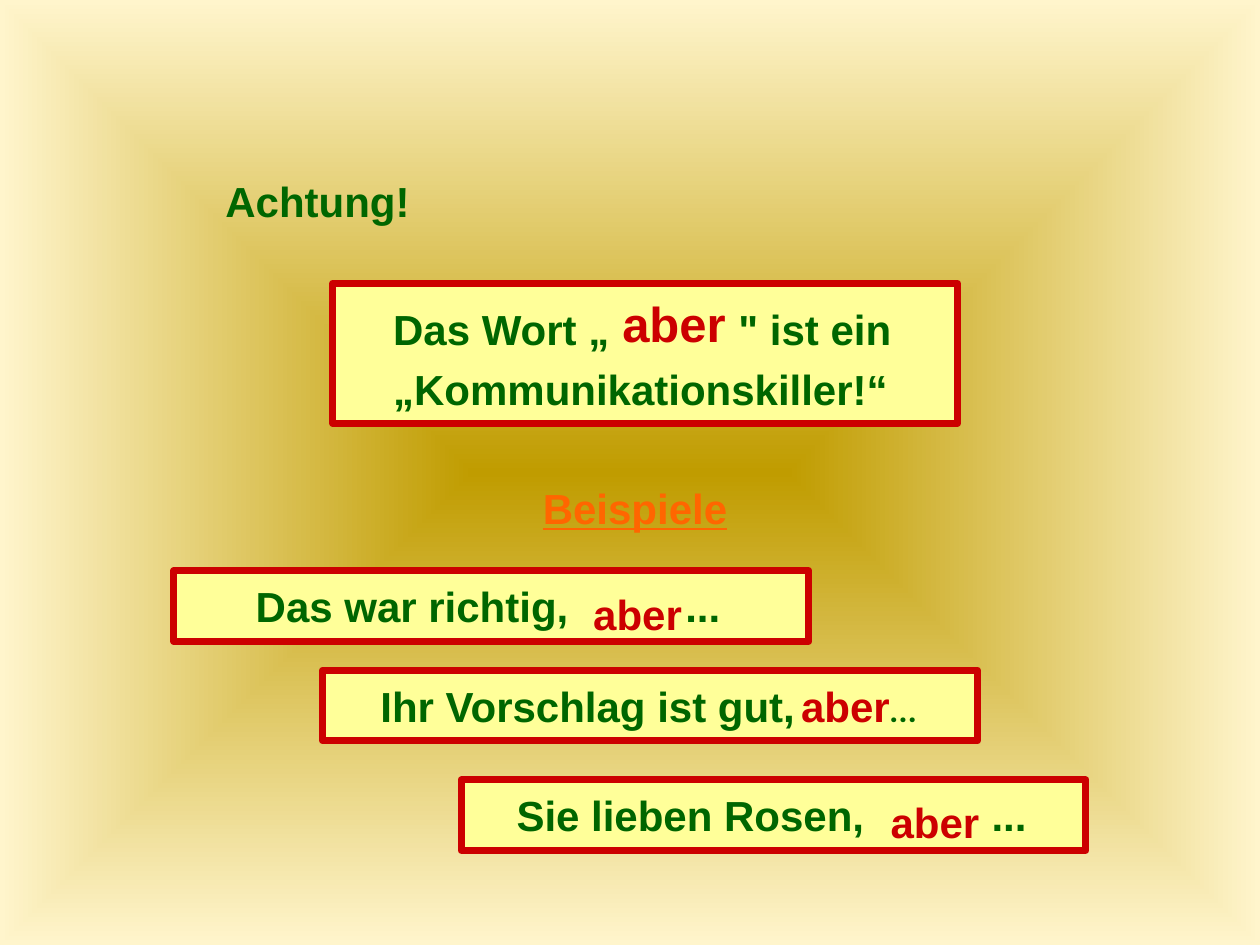
from lxml import etree
from pptx import Presentation
from pptx import util as u
from pptx.dml.color import RGBColor
from pptx.enum import shapes, text
from pptx.oxml.ns import qn

GREEN = RGBColor(0x00, 0x66, 0x00)
RED = RGBColor(0xCC, 0x00, 0x00)
ORANGE = RGBColor(0xFF, 0x66, 0x00)
CREAM = RGBColor(0xFF, 0xFF, 0x99)
GOLD = RGBColor(0xC0, 0x9C, 0x00)
PALE = RGBColor(0xFF, 0xF5, 0xCC)


class Deck:
    font = "Arial"
    size = 24

    def __init__(self):
        self.prs = Presentation()
        self.prs.slide_width = u.Inches(10)
        self.prs.slide_height = u.Inches(7.5)
        self.slide = self.prs.slides.add_slide(self.prs.slide_layouts[6])

    def back(self, inner, outer):
        """Fill the background with a gradient from the centre outwards."""
        fill = self.slide.background.fill
        fill.gradient()
        for stop, color in zip(fill.gradient_stops, (inner, outer)):
            stop.color.rgb = color
        grad = self.slide.element.find(".//" + qn("a:gradFill"))
        grad.remove(grad.find(qn("a:lin")))
        way = etree.SubElement(grad, qn("a:path"), {"path": "shape"})
        sides = dict.fromkeys("ltrb", "50000")
        etree.SubElement(way, qn("a:fillToRect"), sides)

    def run(self, para, words, color, size=None, font=None):
        run = para.add_run()
        run.text = words
        run.font.name = font or self.font
        run.font.size = u.Pt(size or self.size)
        run.font.bold = True
        run.font.color.rgb = color
        return run

    def label(self, x, y, w, h, words, color, size=None):
        box = self.slide.shapes.add_textbox(*map(u.Inches, (x, y, w, h)))
        frame = box.text_frame
        frame.word_wrap = True
        frame.margin_top = u.Inches(0.08)
        frame.margin_bottom = 0
        para = frame.paragraphs[0]
        return para, self.run(para, words, color, size)

    def panel(self, x, y, w, h, start, stop, space=None):
        """Add a framed box; text begins at start, its tab stands at stop."""
        box = self.slide.shapes.add_shape(
            shapes.MSO_SHAPE.RECTANGLE, *map(u.Inches, (x, y, w, h)))
        box.shadow.inherit = False
        box.fill.solid()
        box.fill.fore_color.rgb = CREAM
        box.line.color.rgb = RED
        box.line.width = u.Pt(4)
        frame = box.text_frame
        frame.word_wrap = True
        frame.vertical_anchor = text.MSO_ANCHOR.MIDDLE
        frame.margin_left = u.Inches(start - x)
        frame.margin_right = 0
        para = frame.paragraphs[0]
        para.alignment = text.PP_ALIGN.LEFT
        if space:
            para.line_spacing = space
        tabs = etree.SubElement(para._p.get_or_add_pPr(), qn("a:tabLst"))
        etree.SubElement(tabs, qn("a:tab"),
                         pos=str(u.Inches(stop - start)), algn="l")
        return para


def main():
    deck = Deck()
    deck.back(GOLD, PALE)
    deck.label(1.69, 1.31, 2.28, 0.5, "Achtung!", GREEN)

    para = deck.panel(2.64, 2.25, 4.96, 1.11, 3.12, 5.86, 1.2)
    deck.run(para, "Das Wort „\t\" ist ein", GREEN)
    para.add_line_break()
    deck.run(para, "„Kommunikationskiller!“", GREEN)
    deck.label(4.84, 2.25, 1.18, 0.57, "aber", RED, 28)

    para, run = deck.label(4.09, 3.75, 1.9, 0.5, "Beispiele", ORANGE)
    para.alignment = text.PP_ALIGN.CENTER
    run.font.underline = True

    # left, top, width, text start, dots start, words, dots size, dots font
    cases = [
        (1.38, 4.53, 5.04, 2.03, 5.44, "Das war richtig,", 24, "Arial"),
        (2.56, 5.32, 5.2, 3.02, 7.06, "Ihr Vorschlag ist gut,", 18, "Roboto"),
        (3.66, 6.19, 4.96, 4.1, 7.87, "Sie lieben Rosen,", 24, "Arial"),
    ]
    for x, y, w, start, stop, words, size, font in cases:
        para = deck.panel(x, y, w, 0.56, start, stop)
        deck.run(para, words + "\t", GREEN)
        deck.run(para, "...", GREEN, size, font)
    for x, y in [(4.61, 4.59), (6.26, 5.32), (6.97, 6.24)]:
        deck.label(x, y, 0.94, 0.5, "aber", RED)

    deck.prs.save("out.pptx")


if __name__ == "__main__":
    main()
